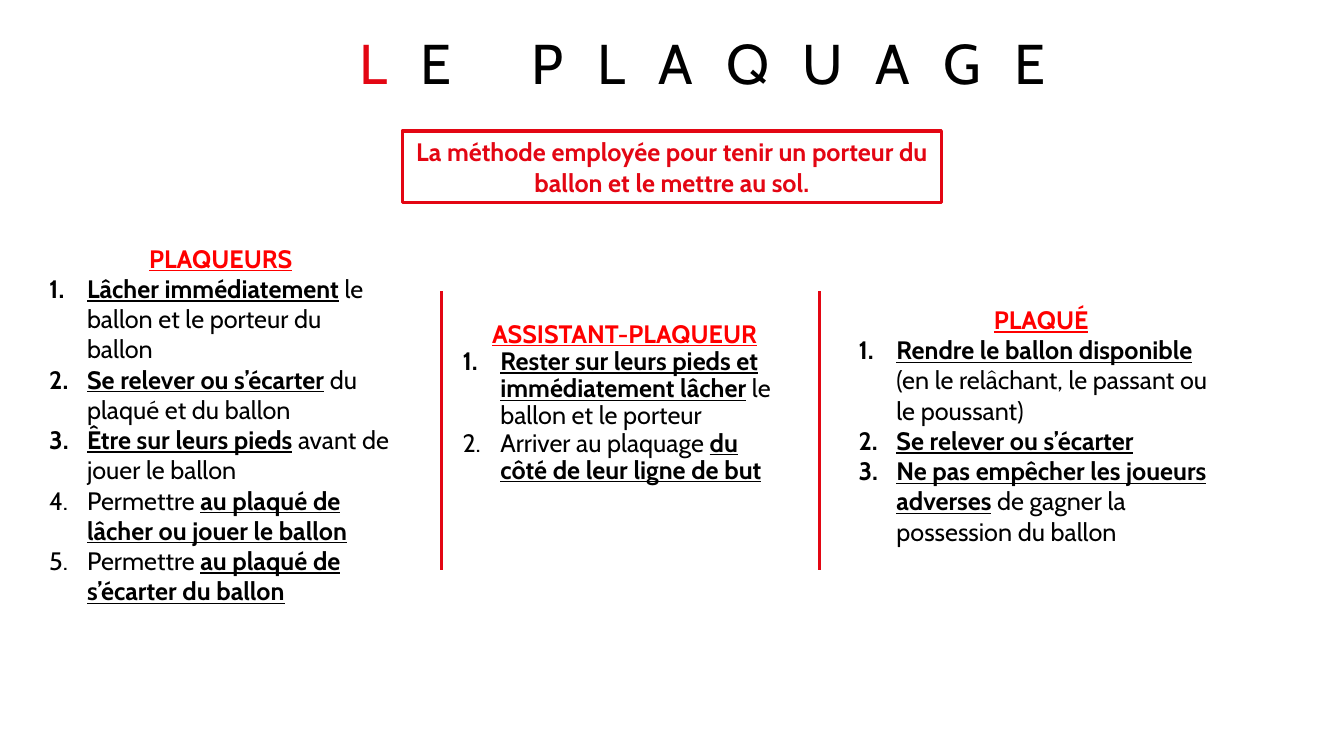
"""Build the rugby slide that explains the tackle and the duties of each player."""
import dataclasses

import pptx
import pptx.dml.color
import pptx.enum.shapes
import pptx.enum.text
import pptx.oxml.ns
import pptx.oxml.xmlchemy
import pptx.util
from lxml import etree


@dataclasses.dataclass(frozen=True)
class Theme:
    """Colours, font and type sizes of the slide."""
    font: str = "Cabin"
    title_size: float = 40
    body_size: float = 18
    title_tracking: float = 24
    rule_width: float = 2.25
    number_indent: float = 27
    accent: str = "E30613"
    heading: str = "FF0000"
    ink: str = "000000"


class SlideBuilder:
    """Draw styled elements on the current slide."""

    def __init__(self, slide, theme):
        """Keep the slide and its theme."""
        self.slide = slide
        self.theme = theme

    def format_run(self, run, color, size=None, bold=False, underline=False):
        """Apply the theme font and the given emphasis to a run."""
        run.font.name = self.theme.font
        run.font.size = pptx.util.Pt(size or self.theme.body_size)
        run.font.bold = bold
        run.font.underline = underline
        run.font.color.rgb = pptx.dml.color.RGBColor.from_string(color)

    def format_line(self, line):
        """Give a line the accent colour and the rule width."""
        line.color.rgb = pptx.dml.color.RGBColor.from_string(self.theme.accent)
        line.width = pptx.util.Pt(self.theme.rule_width)

    def place(self, shape, box):
        """Move and size a shape to a box in points."""
        shape.left, shape.top, shape.width, shape.height = map(pptx.util.Pt, box)

    def title(self, initial, rest, box):
        """Write the spaced title with a coloured initial."""
        shape = self.slide.shapes.title
        self.place(shape, box)
        frame = shape.text_frame
        frame.word_wrap = True
        frame.auto_size = pptx.enum.text.MSO_AUTO_SIZE.NONE
        frame.vertical_anchor = pptx.enum.text.MSO_ANCHOR.MIDDLE
        frame.margin_left = frame.margin_right = frame.margin_bottom = 0
        frame.margin_top = pptx.util.Pt(15)
        paragraph = frame.paragraphs[0]
        paragraph.alignment = pptx.enum.text.PP_ALIGN.CENTER
        paragraph.line_spacing = 0.8
        for text, color in ((initial, self.theme.accent), (rest, self.theme.ink)):
            run = paragraph.add_run()
            run.text = text
            self.format_run(run, color, self.theme.title_size)
            run.font._element.set("spc", str(self.theme.title_tracking * 100))

    def definition(self, text, box):
        """Draw the outlined box that holds the definition."""
        shape = self.slide.shapes.add_shape(
            pptx.enum.shapes.MSO_SHAPE.RECTANGLE, *map(pptx.util.Pt, box))
        shape.shadow.inherit = False
        shape.fill.background()
        self.format_line(shape.line)
        frame = shape.text_frame
        frame.text = text
        frame.word_wrap = True
        frame.auto_size = pptx.enum.text.MSO_AUTO_SIZE.SHAPE_TO_FIT_TEXT
        frame.paragraphs[0].alignment = pptx.enum.text.PP_ALIGN.CENTER
        self.format_run(frame.paragraphs[0].runs[0], self.theme.accent, bold=True)

    def number(self, paragraph):
        """Turn a paragraph into a numbered item with a hanging indent."""
        properties = paragraph._p.get_or_add_pPr()
        indent = pptx.util.Pt(self.theme.number_indent)
        properties.set("marL", str(indent))
        properties.set("indent", str(-indent))
        numbering = etree.SubElement(properties, pptx.oxml.ns.qn("a:buAutoNum"))
        numbering.set("type", "arabicPeriod")

    def duties(self, heading, items, box, line_spacing):
        """Write a heading and its numbered items; asterisks mark key words."""
        shape = self.slide.shapes.add_textbox(*map(pptx.util.Pt, box))
        frame = shape.text_frame
        frame.word_wrap = True
        frame.auto_size = pptx.enum.text.MSO_AUTO_SIZE.SHAPE_TO_FIT_TEXT
        frame.text = heading
        title = frame.paragraphs[0]
        title.alignment = pptx.enum.text.PP_ALIGN.CENTER
        self.format_run(title.runs[0], self.theme.heading, bold=True, underline=True)
        for item in items:
            paragraph = frame.add_paragraph()
            self.number(paragraph)
            for position, text in enumerate(item.split("*")):
                if text:
                    run = paragraph.add_run()
                    run.text = text
                    key = position % 2 == 1
                    self.format_run(run, self.theme.ink, bold=key, underline=key)
        for paragraph in frame.paragraphs:
            paragraph.line_spacing = line_spacing

    def divider(self, x, top, bottom):
        """Draw a vertical rule between two columns."""
        connector = self.slide.shapes.add_connector(
            pptx.enum.shapes.MSO_CONNECTOR.STRAIGHT,
            *map(pptx.util.Pt, (x, top, x, bottom)))
        self.format_line(connector.line)
        etree.SubElement(connector._element.spPr, pptx.oxml.ns.qn("a:effectLst"))


COLUMNS = (
    ("PLAQUEURS", (
        "*Lâcher immédiatement* le ballon et le porteur du ballon",
        "*Se relever ou s’écarter* du plaqué et du ballon",
        "*Être sur leurs pieds* avant de jouer le ballon",
        "Permettre *au plaqué de lâcher ou jouer le ballon*",
        "Permettre *au plaqué de s’écarter du ballon*",
    ), (28.1, 170, 259.2, 269.3), 1.0),
    ("ASSISTANT-PLAQUEUR", (
        "*Rester sur leurs pieds et immédiatement lâcher* le ballon et le porteur",
        "Arriver au plaquage *du côté de leur ligne de but*",
    ), (323.3, 226, 245.5, 164.2), 0.9),
    ("PLAQUÉ", (
        "*Rendre le ballon disponible* (en le relâchant, le passant ou le poussant)",
        "*Se relever ou s’écarter*",
        "*Ne pas empêcher les joueurs adverses* de gagner la possession du ballon",
    ), (606.2, 213.8, 275, 181.4), 1.0),
)


def main():
    """Create the presentation and save it."""
    presentation = pptx.Presentation()
    presentation.slide_width = pptx.util.Pt(960)
    presentation.slide_height = pptx.util.Pt(540)
    slide = presentation.slides.add_slide(presentation.slide_layouts[5])
    builder = SlideBuilder(slide, Theme())
    builder.title("L", "E PLAQUAGE", (213.8, 10, 576, 62.6))
    builder.definition(
        "La méthode employée pour tenir un porteur du ballon et le mettre au sol.",
        (287.3, 93.6, 385.2, 51.1))
    for heading, items, box, line_spacing in COLUMNS:
        builder.duties(heading, items, box, line_spacing)
    for x in (315.4, 585.4):
        builder.divider(x, 208, 407.5)
    presentation.save("out.pptx")


if __name__ == "__main__":
    main()
